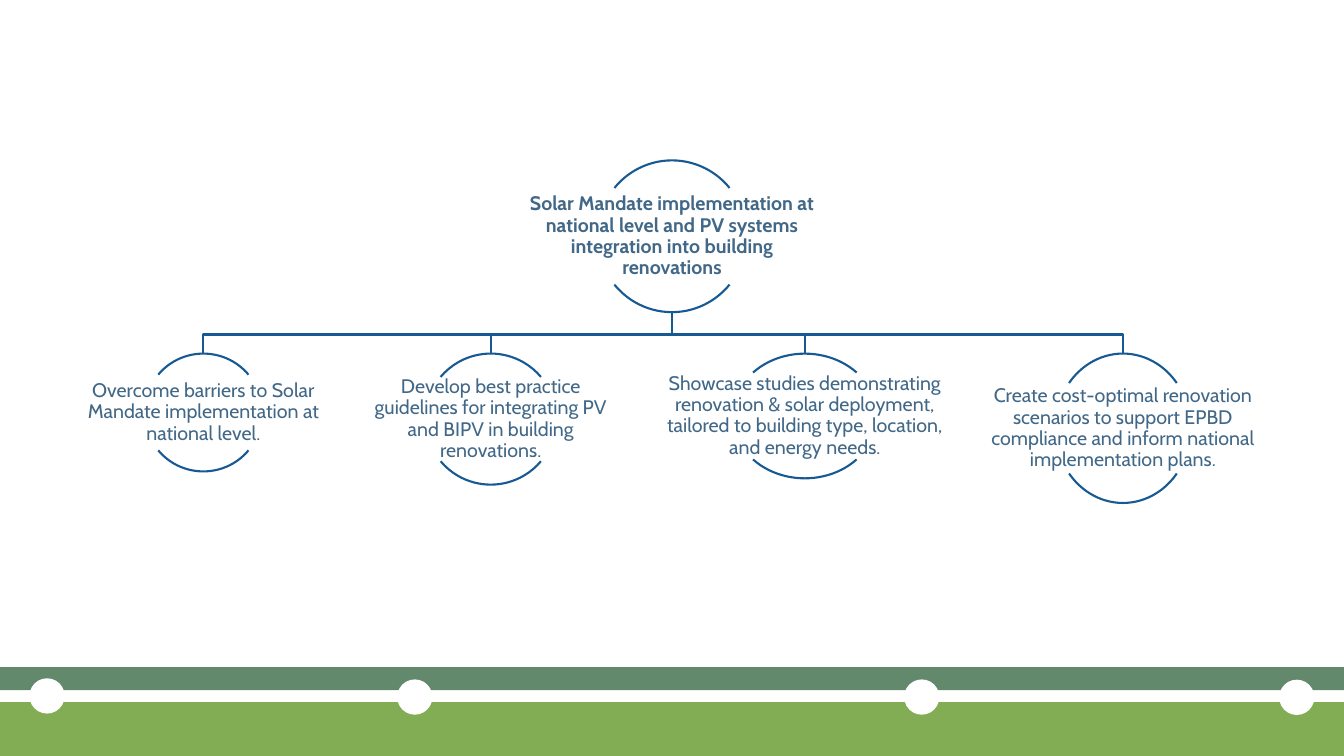
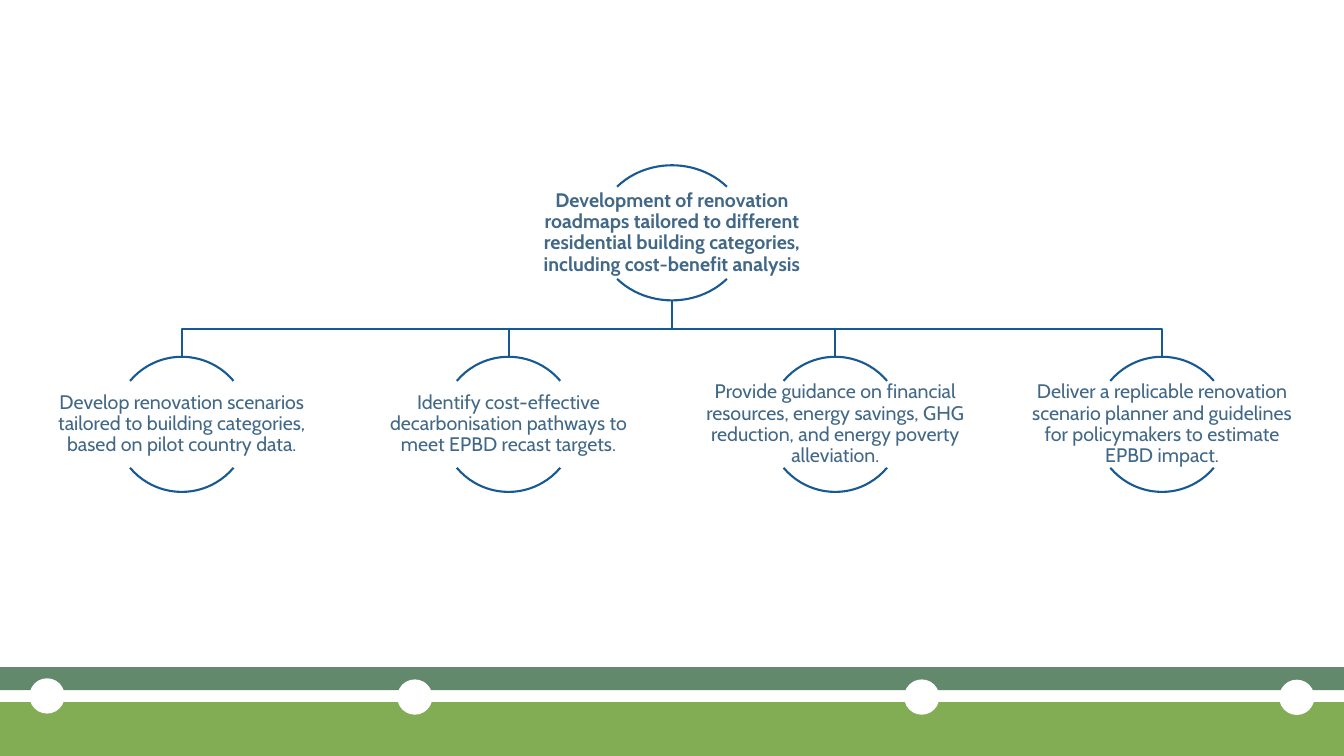
from dataclasses import dataclass

from pptx import Presentation
from pptx.dml.color import RGBColor
from pptx.enum.shapes import MSO_SHAPE
from pptx.enum.text import MSO_ANCHOR, PP_ALIGN
from pptx.util import Pt

# Shared look
WIDE, HIGH = 960, 540
MID = WIDE / 2
BLUE, INK = "175A93", "426888"
MOSS, LEAF, WHITE = "62896B", "83AD55", "FFFFFF"
PAD = Pt(0.7)
FRAME = {
    "word_wrap": True,
    "vertical_anchor": MSO_ANCHOR.MIDDLE,
    "margin_left": PAD,
    "margin_right": PAD,
    "margin_top": PAD,
    "margin_bottom": PAD,
}
PARA = {"alignment": PP_ALIGN.CENTER, "line_spacing": 0.9}
FONT = {"name": "Cabin", "size": Pt(14)}
ARCS = ((132, 192), (24, 84))  # start and end angles of the upper and lower arc


@dataclass
class Node:
    mid: float
    top: float
    wide: float
    high: float
    text: str
    bold: bool = False


@dataclass
class Tree:
    root: Node
    bar: float
    kids: list[Node]


def tint(part, code: str) -> None:
    """Give a fill or font one solid colour."""
    if hasattr(part, "solid"):
        part.solid()
        part = part.fore_color
    else:
        part = part.color
    part.rgb = RGBColor.from_string(code)


def apply(part, values: dict) -> None:
    for key, value in values.items():
        setattr(part, key, value)


def stroke(shape) -> None:
    shape.shadow.inherit = False
    shape.fill.background()
    tint(shape.line, BLUE)
    shape.line.width = Pt(1.5)


def block(slide, kind, box: tuple, code: str):
    shape = slide.shapes.add_shape(kind, *map(Pt, box))
    shape.shadow.inherit = False
    tint(shape.fill, code)
    shape.line.fill.background()
    return shape


def footer(slide, layout) -> None:
    """Draw the bands and dots, then move them to the shared layout."""
    bands = ((476.5, 16.5, MOSS), (501.5, 38.5, LEAF))
    dots = ((21, 484.5), (283.7, 485.3), (645.8, 485.3), (913.7, 485.5))
    parts = [block(slide, MSO_SHAPE.RECTANGLE, (0, top, WIDE, high), code)
             for top, high, code in bands]
    parts += [block(slide, MSO_SHAPE.OVAL, (left, top, 25.2, 25.2), WHITE)
              for left, top in dots]
    for part in parts:
        layout.shapes.element.append(part.element)


def link(slide, root: Node, bar: float, kid: Node) -> None:
    """Draw the bent line from the root down to one child."""
    spots = [(root.mid, root.top + root.high), (root.mid, bar),
             (kid.mid, bar), (kid.mid, kid.top)]
    start, *rest = [(Pt(x), Pt(y)) for x, y in spots]
    pen = slide.shapes.build_freeform(*start)
    pen.add_line_segments(rest, close=False)
    stroke(pen.convert_to_shape())


def draw(slide, node: Node) -> None:
    """Draw two arcs with the text between them."""
    box = (node.mid - node.wide / 2, node.top, node.wide, node.high)
    for ends in ARCS:
        arc = slide.shapes.add_shape(MSO_SHAPE.ARC, *map(Pt, box))
        for i, end in enumerate(ends):
            arc.adjustments[i] = end
        stroke(arc)
    # The label is twice as wide as the arcs and 64% as high
    area = (node.mid - node.wide, node.top + 0.18 * node.high,
            2 * node.wide, 0.64 * node.high)
    frame = slide.shapes.add_textbox(*map(Pt, area)).text_frame
    apply(frame, FRAME)
    para = frame.paragraphs[0]
    apply(para, PARA)
    run = para.add_run()
    run.text = node.text
    apply(run.font, FONT | {"bold": node.bold})
    tint(run.font, INK)


def chart(slide, tree: Tree) -> None:
    for kid in tree.kids:
        link(slide, tree.root, tree.bar, kid)
    for node in (tree.root, *tree.kids):
        draw(slide, node)


# Content
SOLAR = Tree(
    Node(MID, 114.6, 106.6, 108.4,
         "Solar Mandate implementation at national level and PV systems "
         "integration into building renovations", True),
    239,
    [
        Node(145.3, 252.6, 84.2, 84.2,
             "Overcome barriers to Solar Mandate implementation at "
             "national level."),
        Node(350.6, 252.6, 93.6, 93.6,
             "Develop best practice guidelines for integrating PV and BIPV "
             "in building renovations."),
        Node(574.9, 252.6, 103.2, 89.1,
             "Showcase studies demonstrating renovation & solar deployment, "
             "tailored to building type, location, and energy needs."),
        Node(802.1, 252.6, 96.7, 106.7,
             "Create cost-optimal renovation scenarios to support EPBD "
             "compliance and inform national implementation plans."),
    ],
)

SIZE, STEP = 96.5, 233.4
GOALS = (
    "Develop renovation scenarios tailored to building categories, based on "
    "pilot country data.",
    "Identify cost-effective decarbonisation pathways to meet EPBD recast "
    "targets.",
    "Provide guidance on financial resources, energy savings, GHG reduction, "
    "and energy poverty alleviation.",
    "Deliver a replicable renovation scenario planner and guidelines for "
    "policymakers to estimate EPBD impact.",
)
ROADS = Tree(
    Node(MID, 118.1, 107.3, SIZE,
         "Development of renovation roadmaps tailored to different "
         "residential building categories, including cost-benefit analysis",
         True),
    234.7,
    [Node(MID + (i - 1.5) * STEP, 254.9, SIZE, SIZE, goal)
     for i, goal in enumerate(GOALS)],
)


def main() -> None:
    deck = Presentation()
    deck.slide_width, deck.slide_height = Pt(WIDE), Pt(HIGH)
    blank = deck.slide_layouts[6]
    for i, tree in enumerate((SOLAR, ROADS)):
        slide = deck.slides.add_slide(blank)
        if i == 0:
            footer(slide, blank)
        chart(slide, tree)
    deck.save("out.pptx")


if __name__ == "__main__":
    main()
